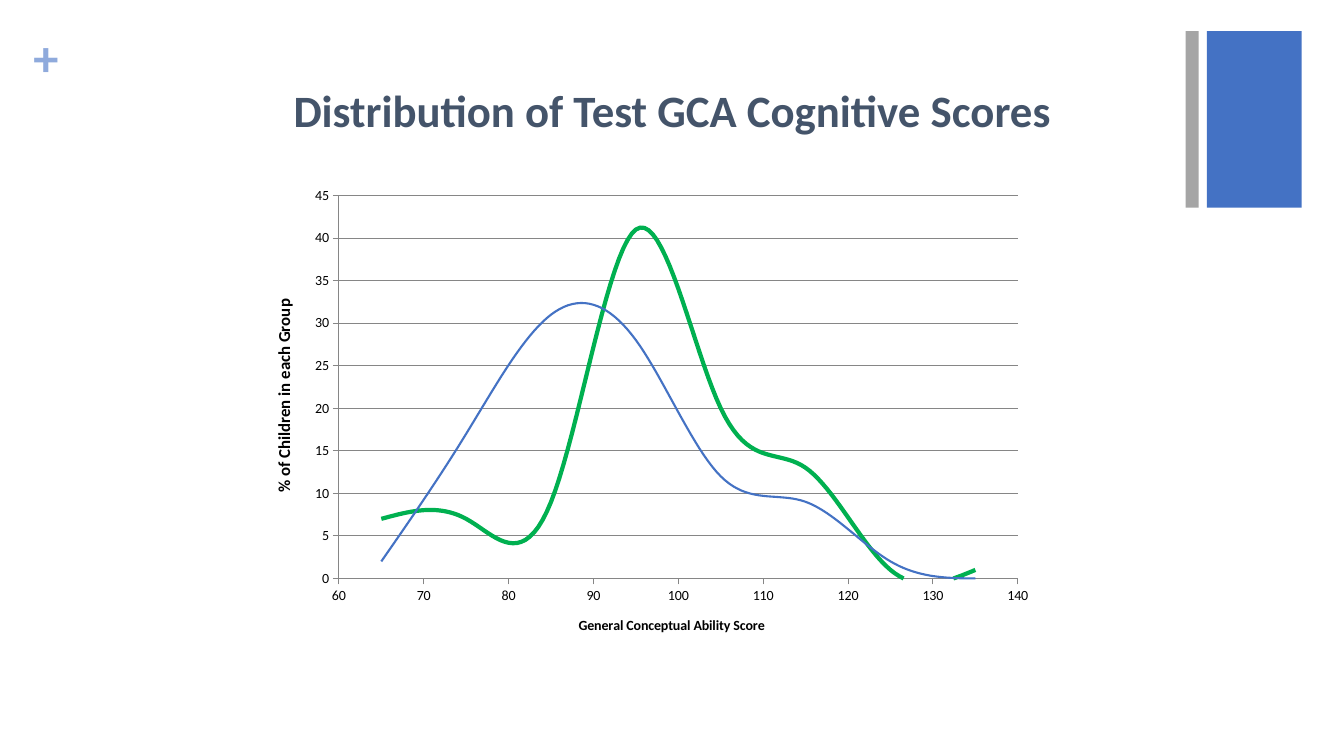
from lxml import etree
from pptx import Presentation
from pptx.chart.data import XyChartData
from pptx.dml.color import RGBColor
from pptx.enum.chart import XL_CHART_TYPE as ChartType, XL_TICK_MARK as Tick
from pptx.enum.shapes import MSO_SHAPE as Shape
from pptx.enum.text import MSO_ANCHOR as Anchor, PP_ALIGN as Align
from pptx.oxml.ns import qn
from pptx.util import Inches, Pt

BLUE = RGBColor(0x44, 0x72, 0xC4)
PALE_BLUE = RGBColor(0x8F, 0xAA, 0xDC)
GREY = RGBColor(0xA5, 0xA5, 0xA5)
AXIS_GREY = RGBColor(0x86, 0x86, 0x86)
SLATE = RGBColor(0x44, 0x54, 0x6A)
GREEN = RGBColor(0x00, 0xB0, 0x50)
BLACK = RGBColor(0, 0, 0)
FONT = "Calibri"

deck = Presentation()
deck.slide_width, deck.slide_height = Inches(13.33), Inches(7.5)
page = deck.slides.add_slide(deck.slide_layouts[6])


def style(font, size, color, bold):
    font.name, font.size, font.bold = FONT, Pt(size), bold
    font.color.rgb = color


def add_text(area, text, size, color, align, inset=0, spacing=1.0):
    box = page.shapes.add_textbox(*map(Inches, area))
    frame = box.text_frame
    frame.word_wrap = True
    frame.vertical_anchor = Anchor.MIDDLE
    frame.margin_left = frame.margin_right = Inches(inset)
    frame.margin_top = frame.margin_bottom = Inches(inset / 2)
    para = frame.paragraphs[0]
    para.alignment = align
    para.line_spacing = spacing
    span = para.add_run()
    span.text = text
    style(span.font, size, color, True)


# Corner bars
for left, width, color in ((11.97, 0.94, BLUE), (11.76, 0.13, GREY)):
    bar = page.shapes.add_shape(Shape.RECTANGLE, Inches(left), Inches(0.31),
                                Inches(width), Inches(1.75))
    bar.shadow.inherit = False
    bar.fill.solid()
    bar.fill.fore_color.rgb = color
    bar.line.fill.background()

# Plus mark and title
add_text((0.33, 0.25, 0.38, 0.61), "+", 36, PALE_BLUE, Align.LEFT)
add_text((0.92, 0.4, 11.5, 1.45), "Distribution of Test GCA Cognitive Scores",
         32, SLATE, Align.CENTER, inset=0.1, spacing=0.9)

# Score curves
curves = (
    ("Series 1", (2, 17, 31, 28, 12, 9, 2, 0), BLUE, 1.5),
    ("Series 2", (7, 7, 9, 41, 20, 13, 1, 1), GREEN, 3),
)
data = XyChartData()
for name, shares, _, _ in curves:
    series = data.add_series(name)
    for score, share in zip(range(65, 136, 10), shares):
        series.add_data_point(score, share)

chart = page.shapes.add_chart(
    ChartType.XY_SCATTER_SMOOTH_NO_MARKERS, Inches(2.5), Inches(1.75),
    Inches(7.83), Inches(4.75), data).chart
chart.has_legend = chart.has_title = False
style(chart.font, 10, BLACK, False)
plot = chart.plots[0]
plot.vary_by_categories = False
for series, (_, _, color, weight) in zip(plot.series, curves):
    series.format.line.color.rgb = color
    series.format.line.width = Pt(weight)

# Scatter series have no public smooth setting
for smooth in chart.element.iter(qn("c:smooth")):
    smooth.set("val", "1")

# Axes
axes = (
    (chart.category_axis, "General Conceptual Ability Score", 10, 60, 140, 10),
    (chart.value_axis, "% of Children in each Group", 12, 0, 45, 5),
)
for axis, title, size, low, high, step in axes:
    axis.minimum_scale, axis.maximum_scale, axis.major_unit = low, high, step
    axis.major_tick_mark, axis.minor_tick_mark = Tick.OUTSIDE, Tick.NONE
    axis.has_major_gridlines = axis is chart.value_axis
    axis.format.line.color.rgb = AXIS_GREY
    axis.tick_labels.number_format = "0"
    axis.tick_labels.number_format_is_linked = False
    style(axis.tick_labels.font, 10, BLACK, False)
    span = axis.axis_title.text_frame.paragraphs[0].add_run()
    span.text = title
    style(span.font, size, BLACK, True)
chart.value_axis.major_gridlines.format.line.color.rgb = AXIS_GREY

# Plot area as shares of the chart frame
area = chart.element.find(".//" + qn("c:plotArea"))
for old in area.findall(qn("c:layout")):
    area.remove(old)
layout = etree.Element(qn("c:layout"))
area.insert(0, layout)
manual = etree.SubElement(layout, qn("c:manualLayout"))
for tag, value in (("layoutTarget", "inner"), ("xMode", "edge"), ("yMode", "edge"),
                   ("x", "0.11"), ("y", "0.04"), ("w", "0.86"), ("h", "0.8")):
    etree.SubElement(manual, qn("c:" + tag)).set("val", value)

deck.save("out.pptx")
